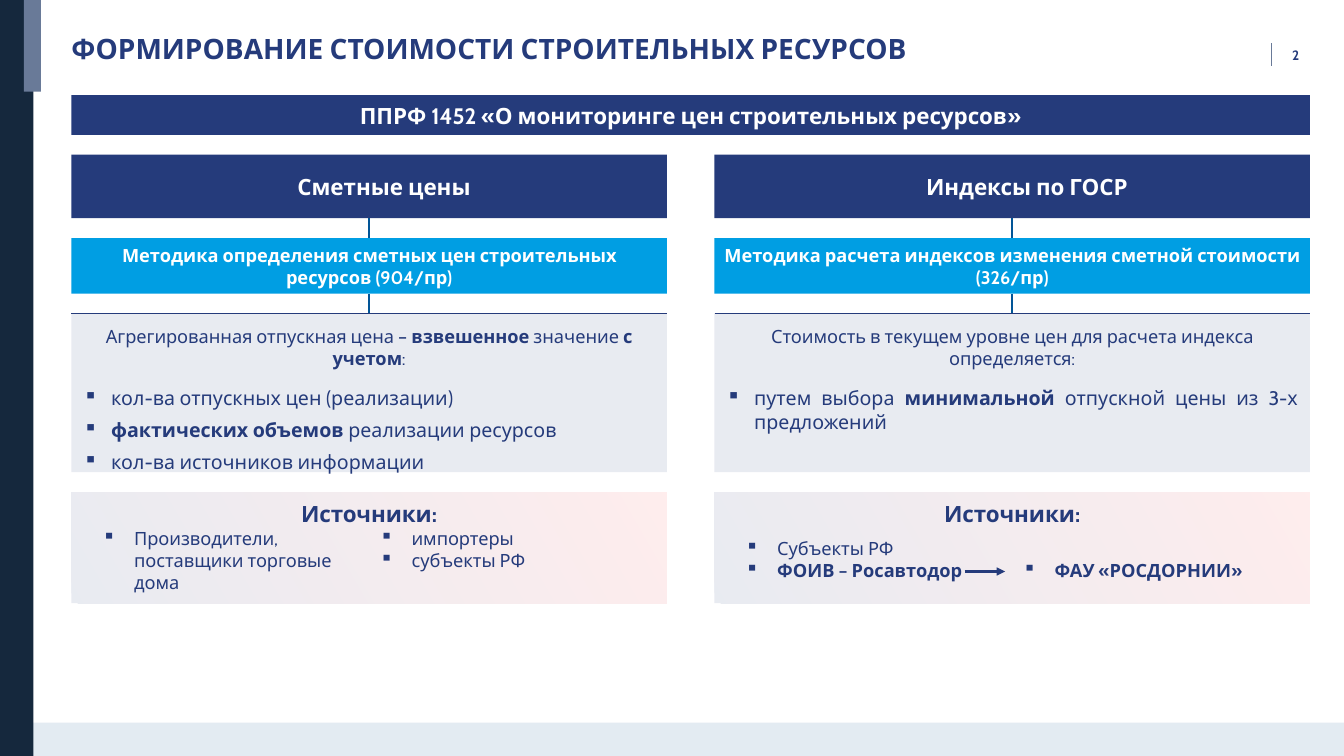
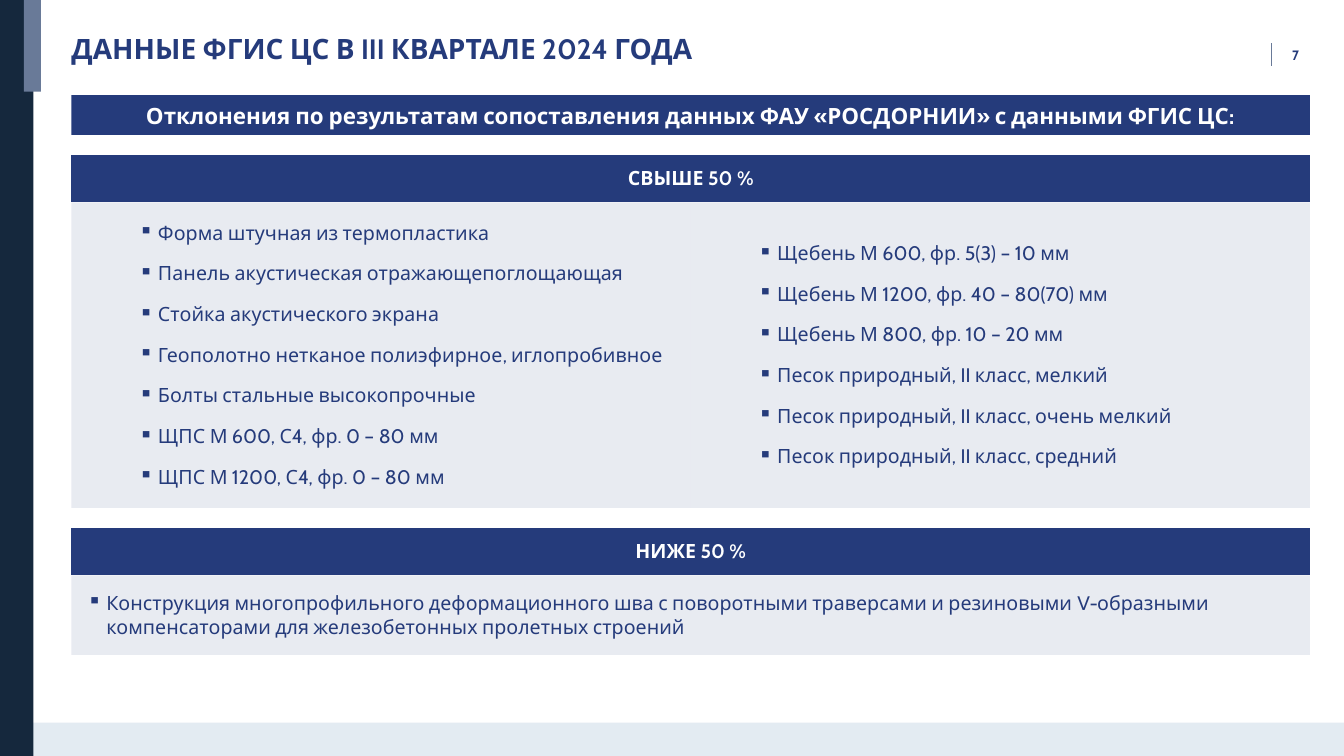
from dataclasses import dataclass

from lxml.etree import SubElement
from pptx import Presentation
from pptx.dml.color import RGBColor
from pptx.enum.shapes import MSO_CONNECTOR, MSO_SHAPE
from pptx.enum.text import MSO_ANCHOR, PP_ALIGN
from pptx.oxml.ns import qn
from pptx.util import Inches, Mm, Pt


@dataclass(frozen=True)
class Theme:
    """Colours, type sizes and the measures of the grid."""

    navy: str = "253B7B"
    sky: str = "009EE3"
    coral: str = "FF5050"
    link: str = "025597"
    sidebar: str = "15283D"
    slate: str = "697A98"
    footer: str = "E3EBF2"
    white: str = "FFFFFF"
    font: str = "Cabin"
    title: float = 20
    heading: float = 16
    body: float = 14
    detail: float = 13
    number: float = 9.7
    tint: int = 10
    column: int = Mm(6)
    row: int = Mm(5)
    left: float = 3
    width: float = 52
    panel: float = 25
    gap: float = 1
    top: float = 4.8
    banner: float = 2


THEME = Theme()
NO_STYLE = "{2D5ABB26-0587-4C30-8999-92F81FD0307C}"


def columns(count):
    """Return the length of a number of grid columns."""
    return round(count * THEME.column)


def rows(count):
    """Return the length of a number of grid rows."""
    return round(count * THEME.row)


def write(frame, *lines, size=THEME.body, color=THEME.navy, bold=False,
          align=PP_ALIGN.LEFT, after=0, hang=0):
    """Add one paragraph a line; asterisks enclose bold spans, hang (mm) adds bullets."""
    for line in lines:
        para = frame.add_paragraph() if frame.text else frame.paragraphs[0]
        para.alignment = align
        para.space_after = Pt(after)
        if hang:
            properties = para._p.get_or_add_pPr()
            properties.set("marL", str(Mm(hang)))
            properties.set("indent", str(-Mm(hang)))
            SubElement(properties, qn("a:buChar")).set("char", "▪")
        for index, text in enumerate(line.split("*")):
            if text:
                span = para.add_run()
                span.text = text
                span.font.name = THEME.font
                span.font.size = Pt(size)
                span.font.bold = bold or index % 2 == 1
                span.font.color.rgb = RGBColor.from_string(color)


def set_margins(holder, left, top, right, bottom):
    """Set the inner margins of a text frame or a cell in millimetres."""
    holder.margin_left, holder.margin_top = Mm(left), Mm(top)
    holder.margin_right, holder.margin_bottom = Mm(right), Mm(bottom)


def paint(fill, color, opacity=100, end=None):
    """Fill with one colour, or with a rising gradient towards the end colour."""
    if end:
        fill.gradient()
        fill.gradient_angle = 30
        for stop, shade in zip(fill.gradient_stops, (color, end)):
            stop.color.rgb = RGBColor.from_string(shade)
    else:
        fill.solid()
        fill.fore_color.rgb = RGBColor.from_string(color)
    if opacity < 100:
        for shade in fill._xPr.iter(qn("a:srgbClr")):
            SubElement(shade, qn("a:alpha")).set("val", str(opacity * 1000))


class Composer:
    """Holds the deck and the current page and draws each kind of element."""

    def __init__(self):
        """Start an empty wide deck."""
        self.deck = Presentation()
        self.deck.slide_width, self.deck.slide_height = Inches(13.33), Inches(7.5)
        self.page = None

    def start_page(self, title, number, banner):
        """Add a page with its bands, title, number and banner."""
        self.page = self.deck.slides.add_slide(self.deck.slide_layouts[6])
        wide = self.deck.slide_width / THEME.column
        high = self.deck.slide_height / THEME.row
        self.box(0, high - 1.68, wide, 1.68, THEME.footer)
        self.box(0, 0, 1.4, high, THEME.sidebar)
        self.box(1, 0, 0.72, 4.62, THEME.slate)
        self.line((53.38, 2.18), (53.38, 3.35), THEME.slate, 1)
        self.text(THEME.left, 1.6, 44, 1.75, title, size=THEME.title, bold=True)
        self.text(54.25, 2.35, 2, 0.85, str(number), size=THEME.number,
                  bold=True, anchor=MSO_ANCHOR.MIDDLE)
        self.label(THEME.left, THEME.top, THEME.width, THEME.banner, banner)

    def box(self, left, top, width, height, color, margins=(0, 0, 0, 0),
            anchor=MSO_ANCHOR.TOP, **filling):
        """Draw a plain filled rectangle."""
        box = self.page.shapes.add_shape(
            MSO_SHAPE.RECTANGLE, columns(left), rows(top), columns(width), rows(height))
        box.shadow.inherit = False
        paint(box.fill, color, **filling)
        box.line.fill.background()
        box.text_frame.word_wrap = True
        box.text_frame.vertical_anchor = anchor
        set_margins(box.text_frame, *margins)
        return box

    def label(self, left, top, width, height, text, color=THEME.navy,
              size=THEME.heading, margins=(4, 1.27, 4, 1.27)):
        """Draw a filled rectangle with white centred bold text."""
        box = self.box(left, top, width, height, color, margins, MSO_ANCHOR.MIDDLE)
        write(box.text_frame, text, size=size, color=THEME.white, bold=True,
              align=PP_ALIGN.CENTER)
        return box

    def text(self, left, top, width, height, *lines, anchor=MSO_ANCHOR.TOP, **style):
        """Place a text box without margins."""
        box = self.page.shapes.add_textbox(
            columns(left), rows(top), columns(width), rows(height))
        frame = box.text_frame
        frame.word_wrap = True
        frame.vertical_anchor = anchor
        set_margins(frame, 0, 0, 0, 0)
        write(frame, *lines, **style)

    def line(self, start, end, color, weight, arrow=False):
        """Draw a straight line between two grid points."""
        line = self.page.shapes.add_connector(
            MSO_CONNECTOR.STRAIGHT, columns(start[0]), rows(start[1]),
            columns(end[0]), rows(end[1]))
        line.line.color.rgb = RGBColor.from_string(color)
        line.line.width = Pt(weight)
        if arrow:
            SubElement(line.line._get_or_add_ln(), qn("a:tailEnd")).set("type", "triangle")
        SubElement(line._element.spPr, qn("a:effectLst"))
        return line

    def join(self, upper, lower):
        """Join the bottom of one box with the top of another."""
        line = self.line((0, 0), (0, 0), THEME.link, 1.5)
        line.begin_connect(upper, 2)
        line.end_connect(lower, 0)

    def panel(self, left, heading, method, intro, points, sources):
        """Stack heading, method, explanation and sources in one half of the page."""
        width, top = THEME.panel, THEME.top + THEME.banner + THEME.gap
        head = self.label(left, top, width, 3.2, heading, margins=(10, 1.27, 2.5, 1.27))
        top += 3.2 + THEME.gap
        basis = self.label(left, top, width, 2.8, method, THEME.sky, THEME.detail,
                           (2, 1.27, 2, 1.27))
        top += 2.8 + THEME.gap
        body = self.box(left, top, width, 8, THEME.navy, (3, 3, 3, 3), opacity=THEME.tint)
        write(body.text_frame, intro, size=THEME.detail, align=PP_ALIGN.CENTER, after=12)
        write(body.text_frame, *points, align=PP_ALIGN.JUSTIFY, after=6, hang=7)
        self.join(head, basis)
        self.join(basis, body)
        self.line((left, top), (left + width, top), THEME.navy, 1)
        top += 8 + THEME.gap
        origin = self.box(left, top, width, 5.6, THEME.navy, (2.5, 2, 2.5, 3),
                          opacity=THEME.tint, end=THEME.coral)
        write(origin.text_frame, "Источники:", size=THEME.heading, bold=True,
              align=PP_ALIGN.CENTER)
        for offset, (drop, lines) in zip((1.3, 12.95), sources):
            self.text(left + offset, top + drop, 10.8, len(lines) * 1.1, *lines,
                      size=THEME.detail, hang=8)

    def table(self, top, heading, height, lists, indent):
        """Draw a table with a heading across its columns of bullet lists."""
        count = len(lists)
        table = self.page.shapes.add_table(
            2, count, columns(THEME.left), rows(top), columns(THEME.width),
            rows(2.4 + height)).table
        table.first_row = table.horz_banding = False
        table._tbl.tblPr.find(qn("a:tableStyleId")).text = NO_STYLE
        table.rows[0].height, table.rows[1].height = rows(2.4), rows(height)
        head = table.cell(0, 0)
        if count > 1:
            head.merge(table.cell(0, count - 1))
        paint(head.fill, THEME.navy)
        set_margins(head, 4, 2, 4, 2)
        write(head.text_frame, heading, color=THEME.white, bold=True,
              align=PP_ALIGN.CENTER)
        for index, lines in enumerate(lists):
            cell = table.cell(1, index)
            paint(cell.fill, THEME.navy, THEME.tint)
            set_margins(cell, indent, 2, 4, 2)
            write(cell.text_frame, *lines, after=12, hang=4.8)
        for cell in table.iter_cells():
            cell.vertical_anchor = MSO_ANCHOR.MIDDLE
        return top + 2.4 + height + THEME.gap


def add_pricing(composer):
    """Build the page on how prices are formed."""
    composer.start_page("ФОРМИРОВАНИЕ СТОИМОСТИ СТРОИТЕЛЬНЫХ РЕСУРСОВ", 2,
                        "ППРФ 1452 «О мониторинге цен строительных ресурсов»")
    composer.panel(
        THEME.left, "Сметные цены",
        "Методика определения сметных цен строительных ресурсов (904/пр)",
        "Агрегированная отпускная цена – *взвешенное *значение *с учетом*:",
        ["кол-ва отпускных цен (реализации)",
         "*фактических объемов *реализации ресурсов",
         "кол-ва источников информации"],
        [(1.8, ["Производители, поставщики торговые дома"]),
         (1.8, ["импортеры", "субъекты РФ"])])
    composer.panel(
        THEME.left + THEME.width - THEME.panel, "Индексы по ГОСР",
        "Методика расчета индексов изменения сметной стоимости (326/пр)",
        "Стоимость в текущем уровне цен для расчета индекса определяется:",
        ["путем выбора *минимальной* отпускной цены из 3-х предложений"],
        [(2.3, ["Субъекты РФ", "*ФОИВ – Росавтодор*"]),
         (3.4, ["*ФАУ «РОСДОРНИИ»*"])])
    composer.line((40.5, 28.8), (42.2, 28.8), THEME.navy, 2, arrow=True)


def add_deviations(composer):
    """Build the page on deviations found in the data."""
    composer.start_page(
        "ДАННЫЕ ФГИС ЦС В III КВАРТАЛЕ 2024 ГОДА", 7,
        "Отклонения по результатам сопоставления данных ФАУ «РОСДОРНИИ» с данными ФГИС ЦС:")
    above = [
        ["Форма штучная из термопластика",
         "Панель акустическая отражающепоглощающая",
         "Стойка акустического экрана",
         "Геополотно нетканое полиэфирное, иглопробивное",
         "Болты стальные высокопрочные",
         "ЩПС М 600, С4, фр. 0 – 80 мм",
         "ЩПС М 1200, С4, фр. 0 – 80 мм"],
        ["Щебень М 600, фр. 5(3) – 10 мм",
         "Щебень М 1200, фр. 40 – 80(70) мм",
         "Щебень М 800, фр. 10 – 20 мм",
         "Песок природный, II класс, мелкий",
         "Песок природный, II класс, очень мелкий",
         "Песок природный, II класс, средний"]]
    below = [["Конструкция многопрофильного деформационного шва с поворотными траверсами "
              "и резиновыми V-образными компенсаторами для железобетонных пролетных строений"]]
    top = THEME.top + THEME.banner + THEME.gap
    top = composer.table(top, "СВЫШЕ 50 %", 15.4, above, indent=17)
    composer.table(top, "НИЖЕ 50 %", 4, below, indent=4)


def main():
    """Build both pages and save the deck."""
    composer = Composer()
    add_pricing(composer)
    add_deviations(composer)
    composer.deck.save("out.pptx")


if __name__ == "__main__":
    main()
